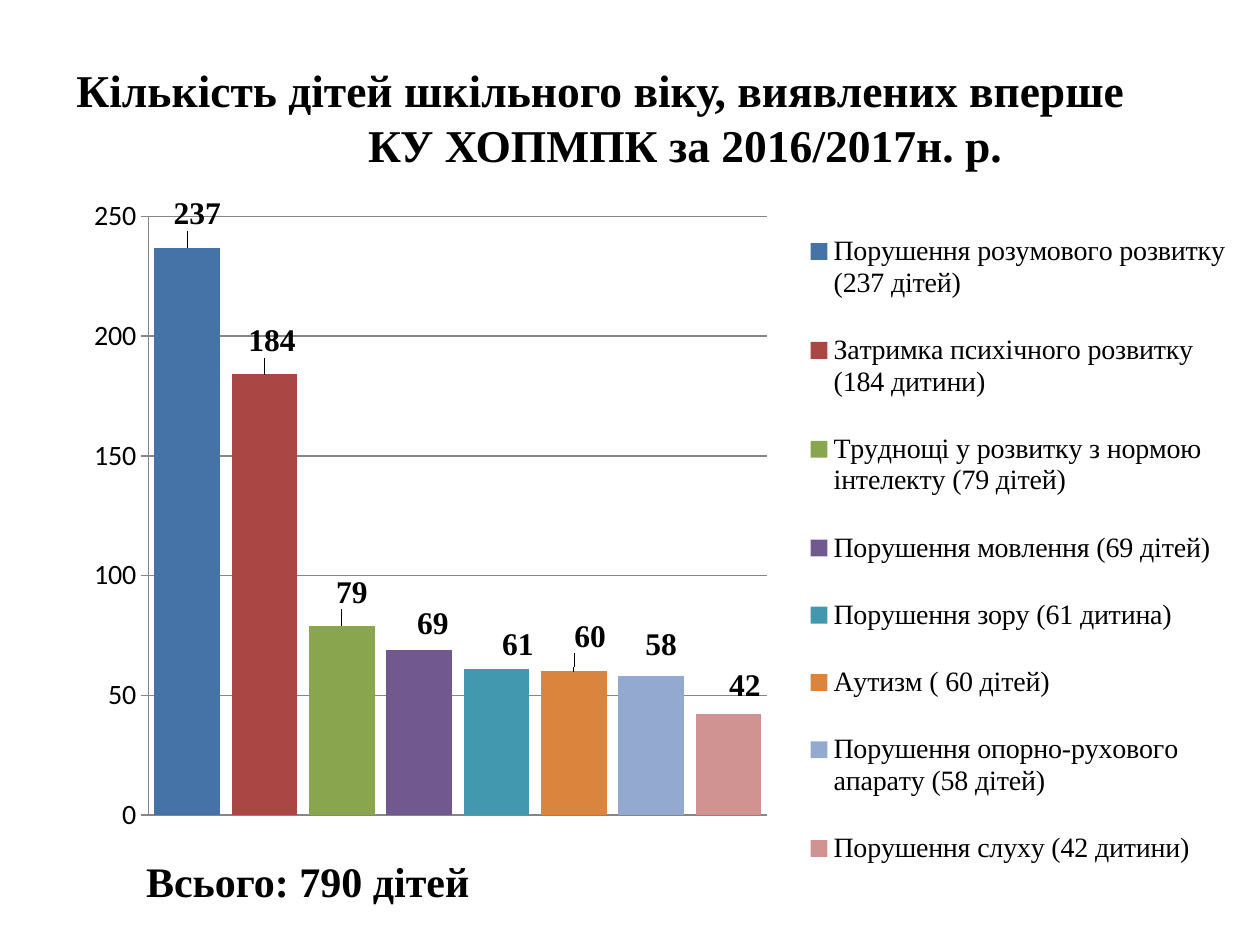
import pptx
import pptx.chart.data
import pptx.dml.color
import pptx.enum.chart
import pptx.enum.text
import pptx.oxml
import pptx.oxml.ns
import pptx.util

Inches = pptx.util.Inches
SERIF = "Times New Roman"

# label, children, bar colour, shift of the value label in inches (right, down)
DISORDERS = [
    ("Порушення розумового розвитку (237 дітей)", 237, "4572A7", (0.08, -0.09)),
    ("Затримка психічного розвитку (184 дитини)", 184, "AA4643", (0.06, -0.09)),
    ("Труднощі у розвитку з нормою інтелекту (79 дітей)", 79, "89A54E", (0.08, -0.09)),
    ("Порушення мовлення (69 дітей)", 69, "71588F", (0.11, -0.03)),
    ("Порушення зору (61 дитина)", 61, "4198AF", (0.17, -0.02)),
    ("Аутизм ( 60 дітей)", 60, "DB843D", (0.13, -0.1)),
    ("Порушення опорно-рухового апарату (58 дітей)", 58, "93A9CF", (0.08, -0.07)),
    ("Порушення слуху (42 дитини)", 42, "D19392", (0.13, -0.05)),
]


def color(value):
    return pptx.dml.color.RGBColor.from_string(value)


def set_all(target, values):
    for name, value in values.items():
        setattr(target, name, value)


def style_font(font, size, name=SERIF, bold=False):
    set_all(font, {"size": pptx.util.Pt(size), "name": name, "bold": bold})
    font.color.rgb = color("000000")


def manual_layout(**values):
    """Return a c:layout element holding the given manual layout values."""
    parts = "".join(f'<c:{tag} val="{value}"/>' for tag, value in values.items())
    return pptx.oxml.parse_xml(
        f'<c:layout {pptx.oxml.ns.nsdecls("c")}>'
        f"<c:manualLayout>{parts}</c:manualLayout></c:layout>")


def replace_layout(parent, layout, after):
    for old in parent.findall(pptx.oxml.ns.qn("c:layout")):
        parent.remove(old)
    if after is None:
        parent.insert(0, layout)
    else:
        after.addnext(layout)


def add_text(slide, box, lines, size, align, wrap):
    """lines: (text, left indent, right indent), indents in inches."""
    frame = slide.shapes.add_textbox(*map(Inches, box)).text_frame
    set_all(frame, {"word_wrap": wrap, "margin_left": 0, "margin_right": 0,
                    "vertical_anchor": pptx.enum.text.MSO_ANCHOR.MIDDLE})
    for number, (text, left, right) in enumerate(lines):
        paragraph = frame.add_paragraph() if number else frame.paragraphs[0]
        paragraph.alignment = align
        properties = paragraph._p.get_or_add_pPr()
        properties.set("marL", str(Inches(left)))
        properties.set("marR", str(Inches(right)))
        run = paragraph.add_run()
        run.text = text
        style_font(run.font, size, bold=True)


def add_title(slide, box):
    add_text(slide, box, [
        ("Кількість дітей шкільного віку, виявлених вперше", 0, 0.46),
        ("КУ ХОПМПК за 2016/2017н. р.", 0.88, 0),
    ], 26, pptx.enum.text.PP_ALIGN.CENTER, True)


def style_axes(chart):
    chart.category_axis.visible = False
    axis = chart.value_axis
    set_all(axis, {"minimum_scale": 0, "maximum_scale": 250, "major_unit": 50,
                   "has_major_gridlines": True,
                   "major_tick_mark": pptx.enum.chart.XL_TICK_MARK.OUTSIDE})
    style_font(axis.tick_labels.font, 16, "Calibri")
    for line in (axis.format.line, axis.major_gridlines.format.line):
        line.color.rgb = color("868686")
        line.width = pptx.util.Pt(0.75)


def style_bars(plot, width, height):
    set_all(plot, {"gap_width": 18, "vary_by_categories": True})
    bars = plot.series[0]
    for number, (_, _, fill, (right, down)) in enumerate(DISORDERS):
        point = bars.points[number]
        point.format.fill.solid()
        point.format.fill.fore_color.rgb = color(fill)
        label = point.data_label
        style_font(label.font, 18, bold=True)
        label.position = pptx.enum.chart.XL_LABEL_POSITION.OUTSIDE_END
        # Layout offsets are fractions of the chart size
        element = label._dLbl
        replace_layout(element, manual_layout(x=right / width, y=down / height),
                       element.find(pptx.oxml.ns.qn("c:idx")))


def style_legend(chart):
    chart.has_legend = True
    legend = chart.legend
    set_all(legend, {"position": pptx.enum.chart.XL_LEGEND_POSITION.RIGHT,
                     "include_in_layout": False})
    style_font(legend.font, 16)
    element = legend._element
    replace_layout(element, manual_layout(
        xMode="edge", yMode="edge", x=0.63, y=0.02, w=0.37, h=0.94),
        element.find(pptx.oxml.ns.qn("c:legendPos")))


def add_disorder_chart(slide, box):
    data = pptx.chart.data.CategoryChartData()
    data.categories = [row[0] for row in DISORDERS]
    data.add_series("Кількість дітей", [row[1] for row in DISORDERS])
    chart = slide.shapes.add_chart(
        pptx.enum.chart.XL_CHART_TYPE.COLUMN_CLUSTERED,
        *map(Inches, box), data).chart
    chart.has_title = False
    style_font(chart.font, 18, "Calibri")
    style_axes(chart)
    style_bars(chart.plots[0], box[2], box[3])
    style_legend(chart)
    replace_layout(chart._chartSpace.chart.plotArea, manual_layout(
        layoutTarget="inner", xMode="edge", yMode="edge",
        x=0.073, y=0.042, w=0.528, h=0.804), None)


def add_total(slide, box):
    add_text(slide, box, [("Всього: 790 дітей", 0.1, 0)], 24,
             pptx.enum.text.PP_ALIGN.LEFT, False)


def main():
    deck = pptx.Presentation()
    set_all(deck, {"slide_width": Inches(10), "slide_height": Inches(7.5)})
    slide = deck.slides.add_slide(deck.slide_layouts[6])
    add_title(slide, (0.5, 0.3, 9, 1.25))
    add_disorder_chart(slide, (0.5, 1.47, 9.3, 5.91))
    add_total(slide, (1.06, 6.74, 2.79, 0.5))
    deck.save("out.pptx")


if __name__ == "__main__":
    main()
